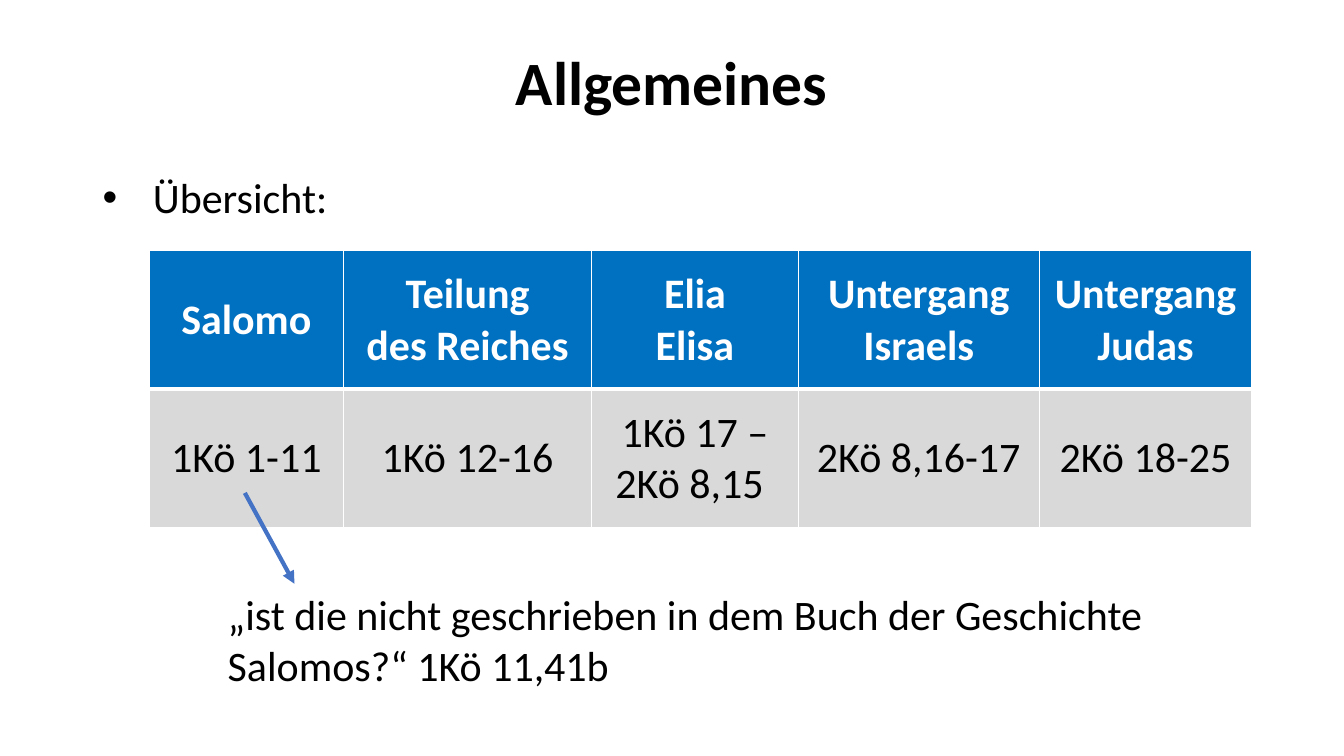
from lxml import etree
from pptx import Presentation
from pptx.dml.color import RGBColor
from pptx.enum.shapes import MSO_CONNECTOR
from pptx.enum.text import MSO_ANCHOR, MSO_AUTO_SIZE, PP_ALIGN
from pptx.oxml import parse_xml
from pptx.oxml.ns import nsdecls, qn
from pptx.util import Cm, Pt

LEFT, CENTER = PP_ALIGN.LEFT, PP_ALIGN.CENTER
TOP, MIDDLE = MSO_ANCHOR.TOP, MSO_ANCHOR.MIDDLE
NO_AUTOFIT = MSO_AUTO_SIZE.NONE
STRAIGHT = MSO_CONNECTOR.STRAIGHT

BLACK = RGBColor(0x00, 0x00, 0x00)
WHITE = RGBColor(0xFF, 0xFF, 0xFF)
HEADER_BLUE = RGBColor(0x00, 0x70, 0xC0)
ROW_GREY = RGBColor(0xD9, 0xD9, 0xD9)
ARROW_BLUE = RGBColor(0x44, 0x72, 0xC4)


def write(frame, text, size=30, color=BLACK, bold=False, align=LEFT, spacing=1.0):
    frame.text = text
    for paragraph in frame.paragraphs:
        paragraph.alignment = align
        paragraph.line_spacing = spacing
        paragraph.space_before = Pt(0)
        for run in paragraph.runs:
            run.font.name = "Calibri"
            run.font.size = Pt(size)
            run.font.bold = bold
            run.font.color.rgb = color


def place(shape, left, top, width, height):
    shape.left, shape.top = Cm(left), Cm(top)
    shape.width, shape.height = Cm(width), Cm(height)


prs = Presentation()
prs.slide_width, prs.slide_height = Cm(33.87), Cm(19.05)
slide = prs.slides.add_slide(prs.slide_layouts[1])

title = slide.shapes.title
place(title, 2.33, 1.02, 29.21, 2.26)
title.text_frame.auto_size = NO_AUTOFIT
title.text_frame.vertical_anchor = MIDDLE
write(title.text_frame, "Allgemeines", size=44, bold=True, align=CENTER, spacing=0.9)

overview = slide.placeholders[1]
place(overview, 2.33, 4.34, 30.66, 1.42)
overview.text_frame.auto_size = NO_AUTOFIT
overview.text_frame.vertical_anchor = TOP
write(overview.text_frame, "Übersicht:", spacing=0.9)
overview_format = overview.text_frame.paragraphs[0]._p.get_or_add_pPr()
overview_format.set("marL", str(Cm(1.27)))
overview_format.set("indent", str(-Cm(1.27)))

sections = [
    ("Salomo", "1Kö 1-11", 4.9),
    ("Teilung\ndes Reiches", "1Kö 12-16", 6.25),
    ("Elia\nElisa", "1Kö 17 –\n2Kö 8,15", 5.21),
    ("Untergang\nIsraels", "2Kö 8,16-17", 6.07),
    ("Untergang\nJudas", "2Kö 18-25", 5.36),
]
table = slide.shapes.add_table(
    2, len(sections), Cm(3.76), Cm(6.32), Cm(27.79), Cm(6.98)
).table
for row in table.rows:
    row.height = Cm(3.49)

for column, (heading, passage, width) in enumerate(sections):
    table.columns[column].width = Cm(width)
    for row, (text, color, fill) in enumerate(
        [(heading, WHITE, HEADER_BLUE), (passage, BLACK, ROW_GREY)]
    ):
        cell = table.cell(row, column)
        cell.margin_left = cell.margin_right = Cm(0.36)
        cell.margin_top = cell.margin_bottom = 0
        cell.vertical_anchor = MIDDLE
        write(cell.text_frame, text, color=color, bold=row == 0, align=CENTER)
        for side in ("L", "R", "T", "B"):
            at_header_edge = (row, side) in [(0, "B"), (1, "T")]
            cell._tc.get_or_add_tcPr().append(parse_xml(
                f'<a:ln{side} {nsdecls("a")} w="{Pt(3 if at_header_edge else 1)}">'
                f'<a:solidFill><a:srgbClr val="{WHITE}"/></a:solidFill></a:ln{side}>'
            ))
        cell.fill.solid()
        cell.fill.fore_color.rgb = fill

elisa_end = table.cell(1, 2).text_frame.paragraphs[1]
elisa_end.alignment = LEFT
elisa_end._p.get_or_add_pPr().set("marL", str(Cm(0.24)))

quote = slide.shapes.add_textbox(Cm(5.49), Cm(14.71), Cm(26.09), Cm(2.82))
quote.text_frame.word_wrap = True
write(
    quote.text_frame,
    "„ist die nicht geschrieben in dem Buch der Geschichte Salomos?“ 1Kö 11,41b",
)

arrow = slide.shapes.add_connector(STRAIGHT, Cm(6.17), Cm(12.42), Cm(7.42), Cm(14.71))
arrow.line.color.rgb = ARROW_BLUE
arrow.line.width = Pt(3)
etree.SubElement(arrow.line._get_or_add_ln(), qn("a:tailEnd"), type="triangle")
etree.SubElement(arrow._element.spPr, qn("a:effectLst"))

prs.save("out.pptx")
